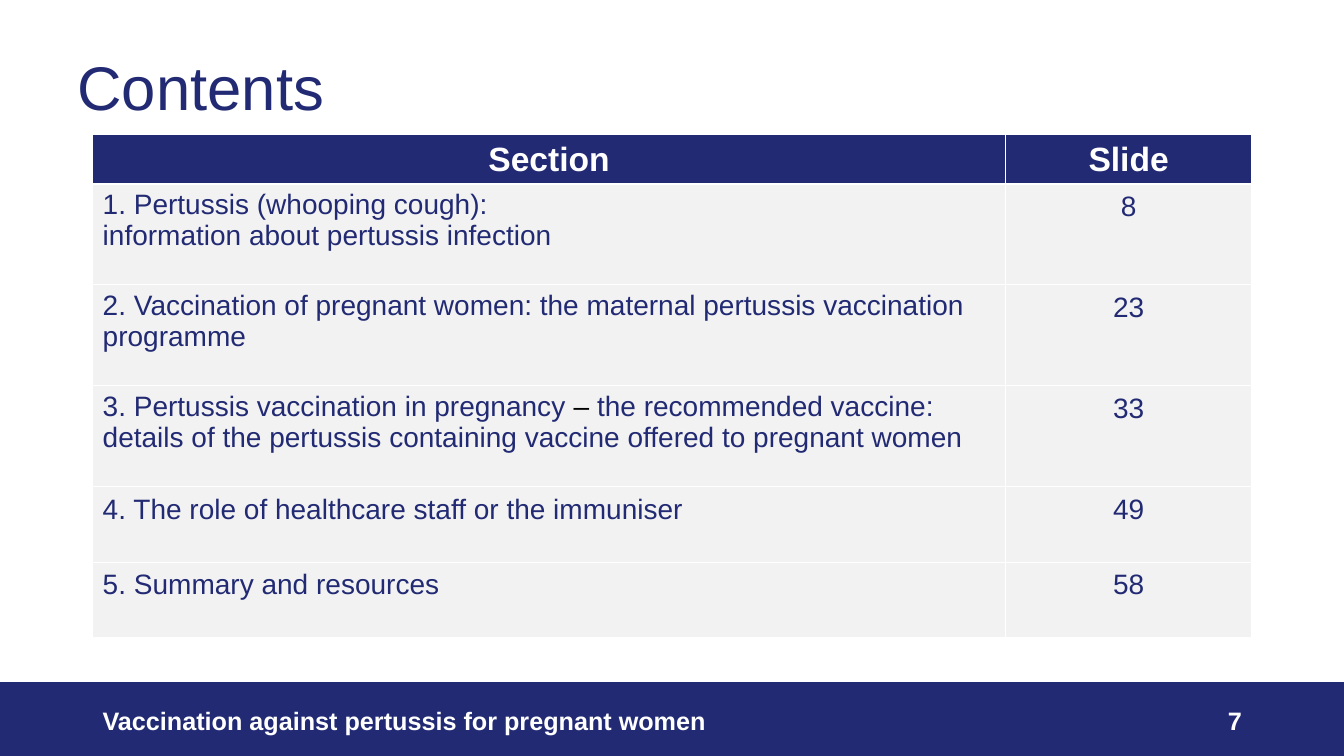
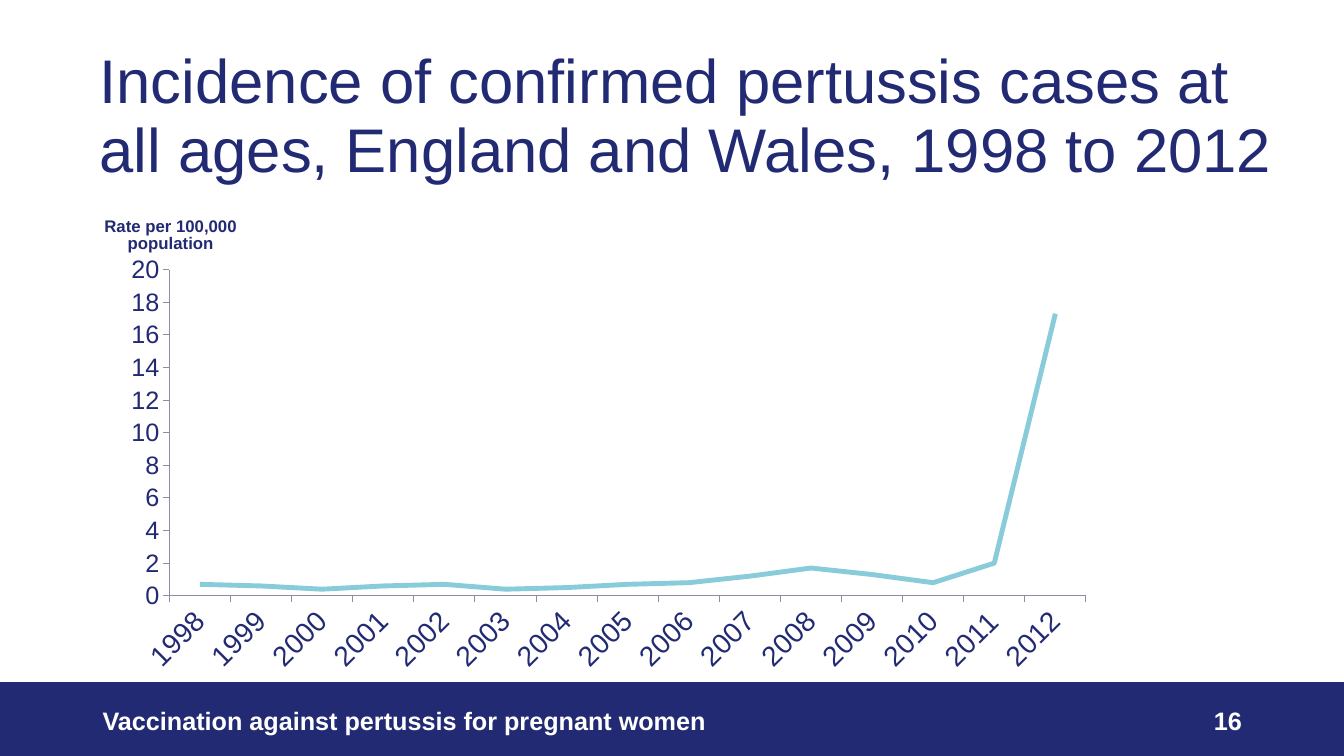
from lxml import etree
from pptx import Presentation
from pptx.chart.data import CategoryChartData
from pptx.dml.color import RGBColor
from pptx.enum.chart import XL_CHART_TYPE, XL_TICK_MARK
from pptx.enum.shapes import MSO_SHAPE
from pptx.enum.text import MSO_ANCHOR, PP_ALIGN
from pptx.oxml.ns import qn
from pptx.util import Pt

LEFT, CENTER, RIGHT = PP_ALIGN.LEFT, PP_ALIGN.CENTER, PP_ALIGN.RIGHT
TOP, MIDDLE = MSO_ANCHOR.TOP, MSO_ANCHOR.MIDDLE
RECTANGLE = MSO_SHAPE.RECTANGLE
LINE_CHART = XL_CHART_TYPE.LINE
TICK_OUTSIDE, TICK_NONE = XL_TICK_MARK.OUTSIDE, XL_TICK_MARK.NONE

NAVY, WHITE, BLACK = "212A73", "FFFFFF", "000000"
PALE, TEAL, AXIS_GREY = "F2F2F2", "88CBD9", "8C8CA6"
FONT = "Arial"
SLIDE_WIDTH, SLIDE_HEIGHT = 960, 540
BAND_TOP = 487.5
MARGIN = 66.2

FOOTER = "Vaccination against pertussis for pregnant women"

CONTENTS_TITLE = "Contents"
CONTENTS_HEADER = ("Section", "Slide")
# A section is a list of paragraphs; a paragraph may hold (text, colour) runs.
SECTIONS = [
    (["1. Pertussis (whooping cough):", "information about pertussis infection"], "8"),
    (["2. Vaccination of pregnant women: the maternal pertussis vaccination programme"], "23"),
    ([[("3. Pertussis vaccination in pregnancy ", NAVY), ("–", BLACK),
       (" the recommended vaccine:", NAVY)],
      "details of the pertussis containing vaccine offered to pregnant women"], "33"),
    (["4. The role of healthcare staff or the immuniser"], "49"),
    (["5. Summary and resources"], "58"),
]
COLUMN_WIDTHS = (652, 176)
ROW_HEIGHTS = (35, 72, 72, 72, 54, 54)
SINGLE_LINE_SECTIONS = (4, 5)

INCIDENCE_TITLE = ("Incidence of confirmed pertussis cases at all ages, "
                   "England and Wales, 1998 to 2012")
RATE_LABEL = ["Rate per 100,000", "population"]
FIRST_YEAR = 1998
RATES = [0.7, 0.6, 0.4, 0.6, 0.7, 0.4, 0.5, 0.7, 0.8, 1.2, 1.7, 1.3, 0.8, 2, 17.3]


def rgb(colour):
    return RGBColor.from_string(colour)


def style_font(font, size, colour, bold=False):
    font.name, font.size, font.bold = FONT, Pt(size), bold
    font.color.rgb = rgb(colour)


def write(frame, paragraphs, size=20, colour=NAVY, bold=False, align=LEFT, spacing=None):
    for index, content in enumerate(paragraphs):
        paragraph = frame.add_paragraph() if index else frame.paragraphs[0]
        paragraph.alignment = align
        if spacing:
            paragraph.line_spacing = spacing
        runs = [(content, colour)] if isinstance(content, str) else content
        for text, run_colour in runs:
            run = paragraph.add_run()
            run.text = text
            style_font(run.font, size, run_colour, bold)


def add_text(slide, box, text, anchor=MIDDLE, side_inset=7.2, **text_format):
    frame = slide.shapes.add_textbox(*map(Pt, box)).text_frame
    frame.word_wrap = True
    frame.vertical_anchor = anchor
    frame.margin_left = frame.margin_right = Pt(side_inset)
    write(frame, [text], **text_format)


def add_page(deck, title, title_box, number):
    slide = deck.slides.add_slide(deck.slide_layouts[6])
    band = slide.shapes.add_shape(RECTANGLE, 0, Pt(BAND_TOP), Pt(SLIDE_WIDTH),
                                  Pt(SLIDE_HEIGHT - BAND_TOP))
    band.shadow.inherit = False
    band.fill.solid()
    band.fill.fore_color.rgb = rgb(NAVY)
    band.line.color.rgb = rgb(NAVY)
    band.line.width = Pt(1)
    add_text(slide, title_box, title, anchor=TOP, side_inset=5, size=44, spacing=0.94)
    add_text(slide, (MARGIN, 500.4, 576, 28.8), FOOTER, size=18, colour=WHITE, bold=True)
    add_text(slide, (678.2, 500.4, 216, 28.8), str(number),
             size=18, colour=WHITE, bold=True, align=RIGHT)
    return slide


def add_borders(cell, widths):
    properties = cell._tc.get_or_add_tcPr()
    for index, (side, width) in enumerate(widths.items()):
        border = etree.Element(qn(f"a:ln{side}"), w=str(Pt(width)))
        fill = etree.SubElement(border, qn("a:solidFill"))
        etree.SubElement(fill, qn("a:srgbClr"), val=WHITE)
        properties.insert(index, border)


def add_contents(slide):
    rows = [([CONTENTS_HEADER[0]], CONTENTS_HEADER[1])] + SECTIONS
    table = slide.shapes.add_table(
        len(rows), len(COLUMN_WIDTHS), Pt(MARGIN), Pt(95.8),
        Pt(sum(COLUMN_WIDTHS)), Pt(sum(ROW_HEIGHTS))).table
    for column, width in zip(table.columns, COLUMN_WIDTHS):
        column.width = Pt(width)
    for row, height in zip(table.rows, ROW_HEIGHTS):
        row.height = Pt(height)
    for row_index, (section, page) in enumerate(rows):
        header = row_index == 0
        for column_index, paragraphs in enumerate((section, [page])):
            cell = table.cell(row_index, column_index)
            cell.fill.solid()
            cell.fill.fore_color.rgb = rgb(NAVY if header else PALE)
            add_borders(cell, {"L": 0.75, "R": 0.75,
                               "T": 1.13 if row_index == 1 else 0.75,
                               "B": 1.13 if header else 0.75})
            if header:
                text_format = dict(size=24, colour=WHITE, bold=True,
                                   align=CENTER, spacing=Pt(28.5))
            elif column_index:
                text_format = dict(align=CENTER, spacing=Pt(24))
            else:
                text_format = dict(
                    spacing=Pt(24) if row_index in SINGLE_LINE_SECTIONS else None)
            write(cell.text_frame, paragraphs, **text_format)


def place(element, position, **settings):
    for layout in element.findall(qn("c:layout")):
        element.remove(layout)
    layout = etree.Element(qn("c:layout"))
    manual = etree.SubElement(layout, qn("c:manualLayout"))
    for name, value in settings.items():
        etree.SubElement(manual, qn(f"c:{name}"), val=str(value))
    element.insert(position, layout)


def add_incidence(slide):
    data = CategoryChartData()
    data.categories = [str(FIRST_YEAR + offset) for offset in range(len(RATES))]
    data.add_series("Series 1", RATES)
    chart = slide.shapes.add_chart(LINE_CHART, Pt(57.6), Pt(116.6), Pt(737.3),
                                   Pt(390.2), data).chart
    chart.has_legend = chart.has_title = False
    style_font(chart.font, 18, NAVY)
    plot = chart.plots[0]
    plot.vary_by_categories = False
    rates = plot.series[0]
    rates.smooth = False
    rates.format.line.color.rgb = rgb(TEAL)
    rates.format.line.width = Pt(3.5)

    years, scale = chart.category_axis, chart.value_axis
    for axis, size in ((years, 20), (scale, 18)):
        axis.has_major_gridlines = False
        axis.major_tick_mark, axis.minor_tick_mark = TICK_OUTSIDE, TICK_NONE
        axis.format.line.color.rgb = rgb(AXIS_GREY)
        axis.format.line.width = Pt(0.75)
        style_font(axis.tick_labels.font, size, NAVY)
    years._element.xpath("c:txPr/a:bodyPr")[0].set("rot", "-2700000")
    scale.minimum_scale, scale.maximum_scale, scale.major_unit = 0, 20, 2

    label = scale.axis_title
    write(label.text_frame, RATE_LABEL, size=12, bold=True, align=CENTER)
    title = label._element
    body = title.xpath(".//a:bodyPr")[0]
    body.set("rot", "0")
    body.set("vert", "horz")
    place(title, 1, xMode="edge", yMode="edge", x=0.02, y=0.09)
    place(chart._chartSpace.xpath("c:chart/c:plotArea")[0], 0, layoutTarget="inner",
          xMode="edge", yMode="edge", x=0.086, y=0.195, w=0.888, h=0.597)


def main():
    deck = Presentation()
    deck.slide_width, deck.slide_height = Pt(SLIDE_WIDTH), Pt(SLIDE_HEIGHT)
    add_contents(add_page(deck, CONTENTS_TITLE, (50.4, 36, 632, 51), 7))
    add_incidence(add_page(deck, INCIDENCE_TITLE, (MARGIN, 30.5, 865.4, 101.5), 16))
    deck.save("out.pptx")


if __name__ == "__main__":
    main()
